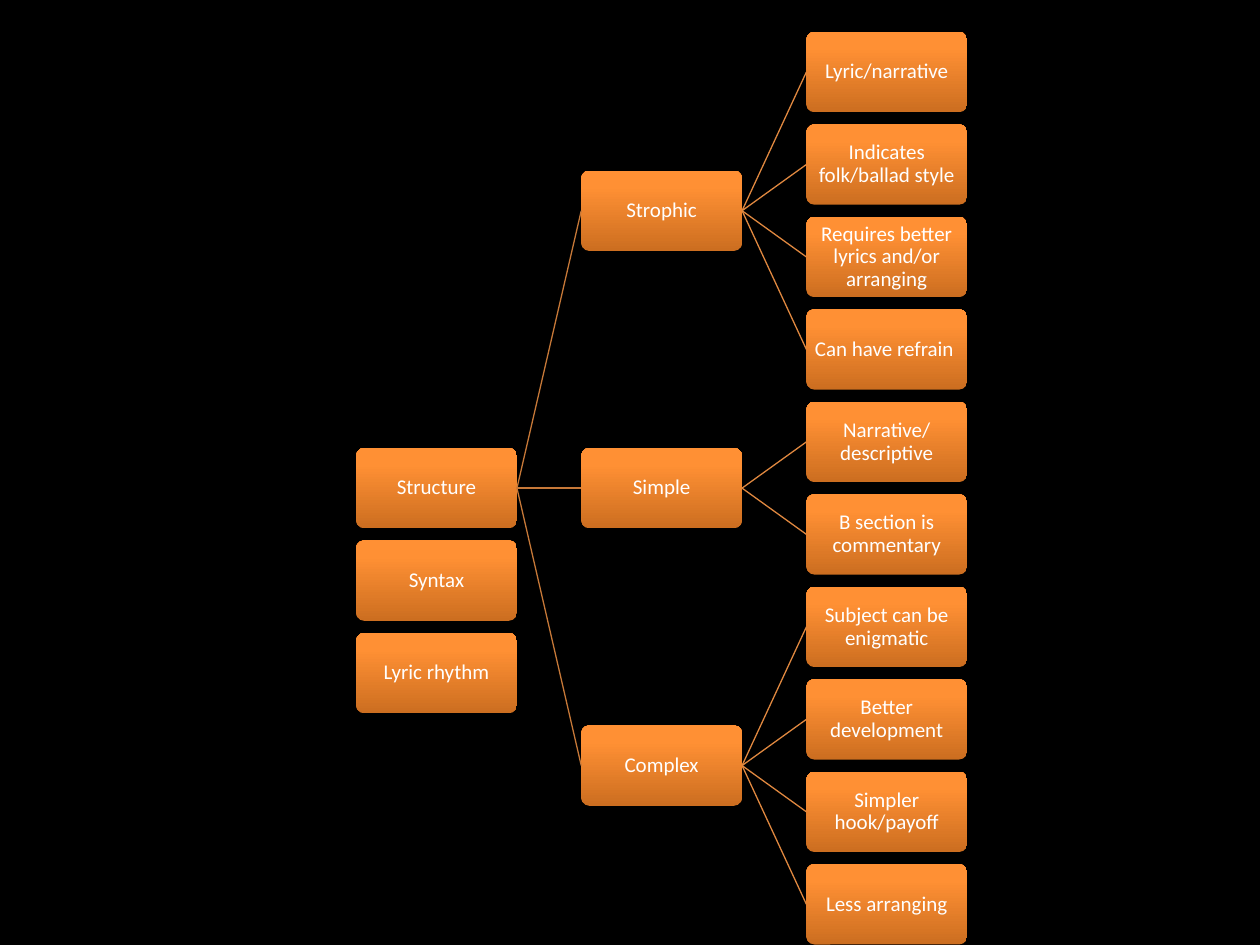
"""Build a slide with a three-level tree of lyric structure topics."""
from copy import deepcopy

from lxml import etree
from pptx import Presentation
from pptx.dml.color import RGBColor
from pptx.enum.shapes import MSO_CONNECTOR, MSO_SHAPE
from pptx.enum.text import MSO_ANCHOR, PP_ALIGN
from pptx.oxml import parse_xml
from pptx.oxml.ns import nsdecls, qn
from pptx.util import Pt

ROUNDED = MSO_SHAPE.ROUNDED_RECTANGLE
STRAIGHT = MSO_CONNECTOR.STRAIGHT
MIDDLE = MSO_ANCHOR.MIDDLE
CENTER = PP_ALIGN.CENTER
BLACK = RGBColor(0x00, 0x00, 0x00)
WHITE = RGBColor(0xFF, 0xFF, 0xFF)
GRADIENT = [
    (0, RGBColor(0xCC, 0x6E, 0x20)),
    (0.8, RGBColor(0xFF, 0x90, 0x34)),
    (1, RGBColor(0xFF, 0x91, 0x36)),
]
BRANCH_LINE = RGBColor(0xC6, 0x78, 0x38)
LEAF_LINE = RGBColor(0xE0, 0x88, 0x40)

LEFT, TOP = 203.5, 18.2
BOX_W, BOX_H = 91.9, 45.95
COLUMN_STEP, ROW_STEP = 128.65, 52.84
SHADOW = (
    f'<a:outerShdw {nsdecls("a")} blurRad="{Pt(3.1)}" dist="{Pt(1.8)}" dir="5400000" rotWithShape="0">'
    '<a:srgbClr val="000000"><a:alpha val="35000"/></a:srgbClr></a:outerShdw>'
)
BRANCHES = {
    "Strophic": [
        "Lyric/narrative",
        "Indicates folk/ballad style",
        "Requires better lyrics and/or arranging",
        "Can have refrain ",
    ],
    "Simple": ["Narrative/descriptive", "B section is commentary"],
    "Complex": [
        "Subject can be enigmatic",
        "Better development",
        "Simpler hook/payoff",
        "Less arranging",
    ],
}

prs = Presentation()
prs.slide_width, prs.slide_height = Pt(720), Pt(540)
s = prs.slides.add_slide(prs.slide_layouts[6])
s.background.fill.solid()
s.background.fill.fore_color.rgb = BLACK


def add_box(text, column, row):
    sp = s.shapes.add_shape(
        ROUNDED, Pt(LEFT + column * COLUMN_STEP), Pt(TOP + row * ROW_STEP), Pt(BOX_W), Pt(BOX_H)
    )
    sp.adjustments[0] = 0.1
    sp.line.fill.background()
    sp.shadow.inherit = False
    sp._element.spPr.find(qn("a:effectLst")).append(parse_xml(SHADOW))
    sp.fill.gradient()
    sp.fill.gradient_angle = 90
    stop_list = sp._element.spPr.find(qn("a:gradFill")).find(qn("a:gsLst"))
    stop_list.append(deepcopy(stop_list[-1]))
    for stop, (position, color) in zip(sp.fill.gradient_stops, GRADIENT):
        stop.position = position
        stop.color.rgb = color
    tf = sp.text_frame
    tf.word_wrap = True
    tf.vertical_anchor = MIDDLE
    tf.margin_left = tf.margin_right = tf.margin_top = tf.margin_bottom = Pt(0.7)
    tf.text = text
    p = tf.paragraphs[0]
    p.alignment = CENTER
    p.line_spacing = 0.9
    font = p.runs[0].font
    font.name, font.size, font.color.rgb = "Calibri", Pt(12), WHITE
    return sp


def join(parent, child, color):
    line = s.shapes.add_connector(STRAIGHT, 0, 0, 0, 0)
    line.begin_connect(parent, 3)
    line.end_connect(child, 1)
    line.line.color.rgb = color
    line.line.width = Pt(0.75)
    etree.SubElement(line._element.spPr, qn("a:effectLst"))


root_row = (sum(len(leaves) for leaves in BRANCHES.values()) - 1) / 2
roots = [
    add_box(text, 0, root_row + i)
    for i, text in enumerate(["Structure", "Syntax", "Lyric rhythm"])
]

first_row = 0
for branch_text, leaves in BRANCHES.items():
    branch = add_box(branch_text, 1, first_row + (len(leaves) - 1) / 2)
    join(roots[0], branch, BRANCH_LINE)
    for i, leaf_text in enumerate(leaves):
        join(branch, add_box(leaf_text, 2, first_row + i), LEAF_LINE)
    first_row += len(leaves)

prs.save("out.pptx")
